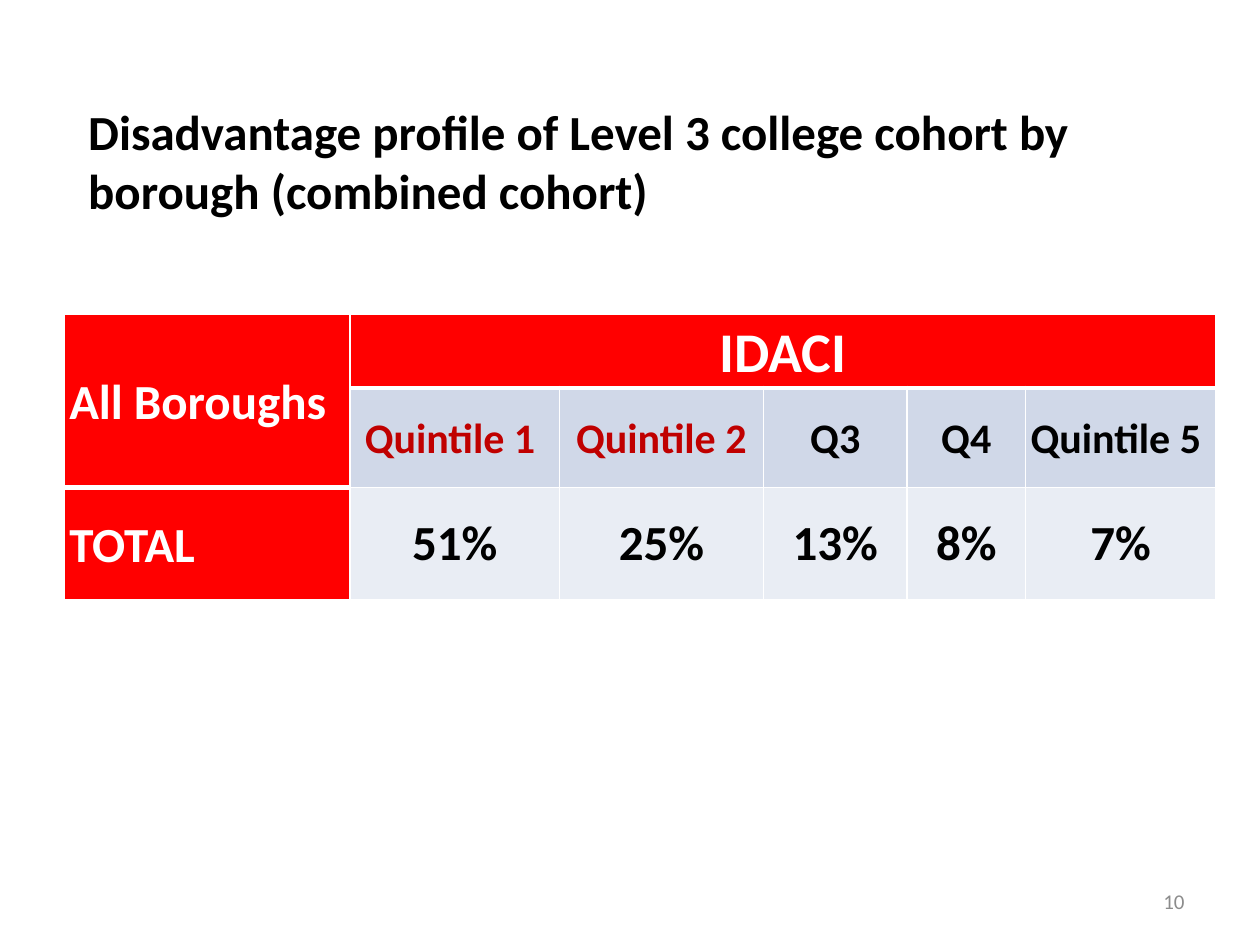
from dataclasses import dataclass
from lxml.etree import SubElement
from pptx import Presentation
from pptx.dml.color import RGBColor
from pptx.enum.text import MSO_ANCHOR as Anchor, MSO_AUTO_SIZE as AutoSize, PP_ALIGN as Align
from pptx.oxml.ns import qn
from pptx.util import Inches, Pt

WIDTH, HEIGHT = 10, 7.5
BLACK, WHITE, GREY = "000000", "FFFFFF", "8C8C8C"
RED, DARK_RED = "FF0000", "C00000"
HEADING_BAND, VALUE_BAND = "D0D8E8", "E9EDF4"
COLUMNS = [2.27, 1.66, 1.62, 1.14, 0.94, 1.51]
ROWS = [0.59, 0.79, 0.89]
QUINTILES = ["Quintile 1 ", "Quintile 2", "Q3", "Q4", "Quintile 5 "]
SHARES = ["51%", "25%", "13%", "8%", "7%"]


def colour(hex_text):
    return RGBColor.from_string(hex_text)


@dataclass
class SlideBuilder:
    deck: object
    page: object
    font: str = "Calibri"

    def place(self, box, left, top, width, height):
        box.left, box.width = (int(self.deck.slide_width * share) for share in (left, width))
        box.top, box.height = (int(self.deck.slide_height * share) for share in (top, height))

    def add_text(self, frame, text, size, ink, align=Align.LEFT, bold=True, spacing=1.0):
        para = frame.paragraphs[0]
        para.alignment = align
        para.line_spacing = spacing
        span = para.add_run()
        span.text = text
        span.font.name = self.font
        span.font.size = Pt(size)
        span.font.bold = bold
        span.font.color.rgb = colour(ink)

    def title(self, text, *area):
        box = self.page.shapes.title
        self.place(box, *area)
        frame = box.text_frame
        frame.auto_size = AutoSize.NONE
        frame.word_wrap = True
        frame.vertical_anchor = Anchor.TOP
        self.add_text(frame, text, 28, BLACK)

    def page_number(self, text, *area):
        box = self.page.shapes.add_textbox(0, 0, 0, 0)
        self.place(box, *area)
        frame = box.text_frame
        frame.word_wrap = True
        frame.vertical_anchor = Anchor.MIDDLE
        self.add_text(frame, text, 12, GREY, Align.RIGHT, bold=False)

    def table(self, left, top, columns, rows):
        box = self.page.shapes.add_table(len(rows), len(columns), 0, 0, 0, 0)
        self.place(box, left, top, sum(columns) / WIDTH, sum(rows) / HEIGHT)
        grid = box.table
        grid.first_row = grid.horz_banding = False
        for column, width in zip(grid.columns, columns):
            column.width = Inches(width)
        for row, height in zip(grid.rows, rows):
            row.height = Inches(height)
        return grid

    def borders(self, cell, top=1, bottom=1):
        props = cell._tc.get_or_add_tcPr()
        for side, weight in (("L", 1), ("R", 1), ("T", top), ("B", bottom)):
            line = SubElement(props, qn(f"a:ln{side}"), w=str(Pt(weight)))
            fill = SubElement(line, qn("a:solidFill"))
            SubElement(fill, qn("a:srgbClr"), val=WHITE)

    def cell(self, cell, text, size, ink, fill, align=Align.CENTER, inset=0.04, spacing=1.07):
        cell.fill.solid()
        cell.fill.fore_color.rgb = colour(fill)
        cell.vertical_anchor = Anchor.MIDDLE
        cell.margin_left = cell.margin_right = Inches(inset)
        cell.margin_top = cell.margin_bottom = 0
        self.add_text(cell.text_frame, text, size, ink, align, spacing=spacing)


def main():
    deck = Presentation()
    deck.slide_width, deck.slide_height = Inches(WIDTH), Inches(HEIGHT)
    builder = SlideBuilder(deck, deck.slides.add_slide(deck.slide_layouts[5]))

    builder.page_number("10", 0.717, 0.927, 0.233, 0.053)
    builder.title("Disadvantage profile of Level 3 college cohort by borough (combined cohort)",
                  0.06, 0.101, 0.898, 0.139)

    grid = builder.table(0.051, 0.332, COLUMNS, ROWS)
    for row in range(len(ROWS)):
        for column in range(len(COLUMNS)):
            header_end = 1 if column == 0 else 0
            builder.borders(grid.cell(row, column),
                            top=3 if row == header_end + 1 else 1,
                            bottom=3 if row in (0, header_end) else 1)
    grid.cell(0, 0).merge(grid.cell(1, 0))
    grid.cell(0, 1).merge(grid.cell(0, 5))

    builder.cell(grid.cell(0, 0), "All Boroughs", 28, WHITE, RED, Align.LEFT)
    builder.cell(grid.cell(0, 1), "IDACI", 32, WHITE, RED)
    builder.cell(grid.cell(2, 0), "TOTAL", 28, WHITE, RED, Align.LEFT)
    for column, (quintile, share) in enumerate(zip(QUINTILES, SHARES), 1):
        ink = DARK_RED if column <= 2 else BLACK
        builder.cell(grid.cell(1, column), quintile, 24, ink, HEADING_BAND)
        builder.cell(grid.cell(2, column), share, 28, BLACK, VALUE_BAND, inset=0.01, spacing=1.0)

    deck.save("out.pptx")


if __name__ == "__main__":
    main()
